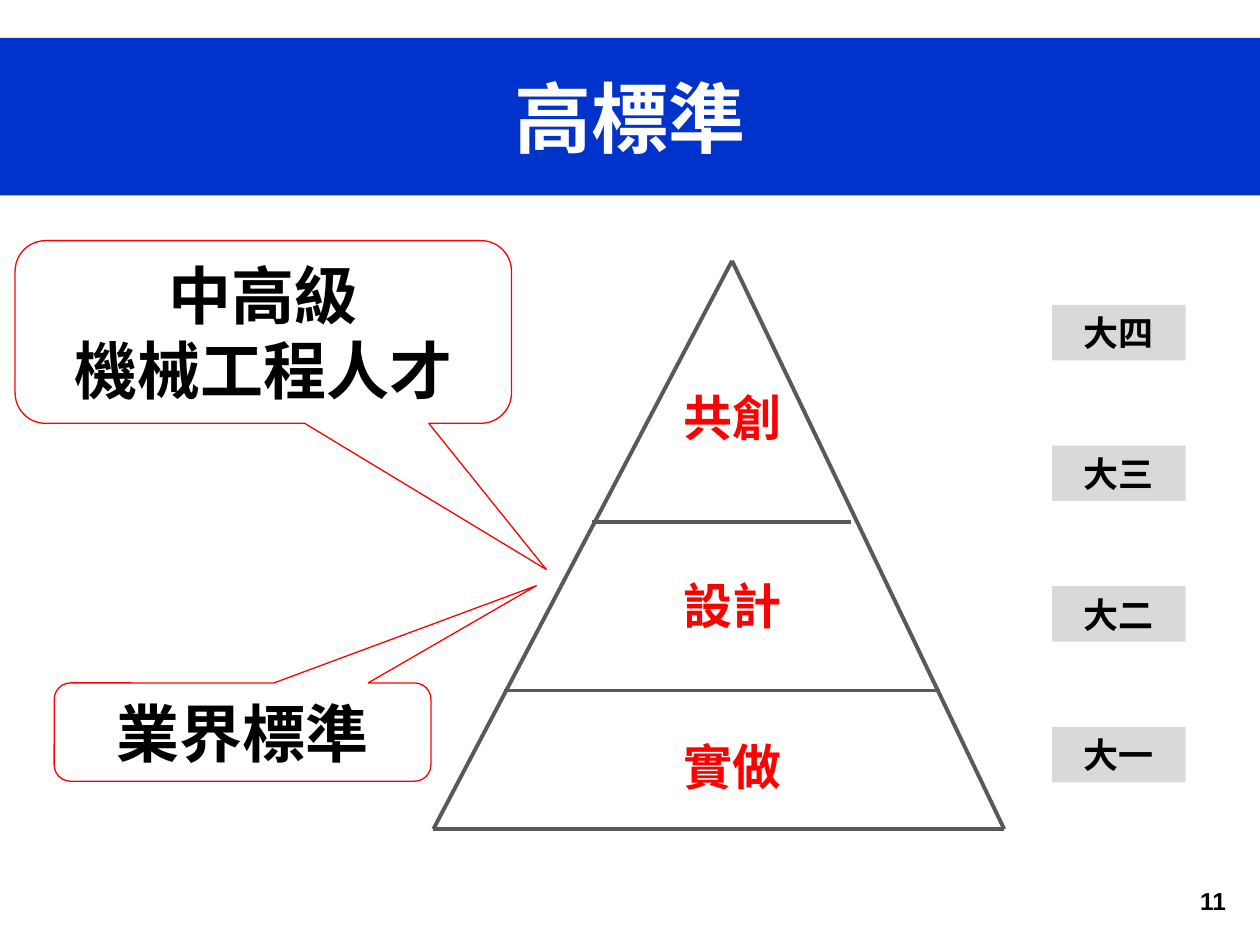
from collections import namedtuple

from lxml import etree
from pptx import Presentation
from pptx import util as u
from pptx.dml import color
from pptx.enum import shapes, text
from pptx.oxml import ns

COLUMNS, ROWS = 100, 75
CELL = u.Inches(0.1)
CJK = "Noto Sans CJK SC"
Box = namedtuple("Box", "left top width height")


def grid(*cells):
    return [round(cell * CELL) for cell in cells]


def rgb(value):
    return color.RGBColor.from_string(value)


def apply(target, values):
    for name, value in values.items():
        setattr(target, name, value)


def write(shape, lines, size, ink, font=CJK, align=text.PP_ALIGN.CENTER,
          anchor=text.MSO_ANCHOR.TOP):
    frame = shape.text_frame
    frame.text = "\n".join(lines)
    apply(frame, {"word_wrap": True, "vertical_anchor": anchor,
                  "auto_size": text.MSO_AUTO_SIZE.NONE})
    for paragraph in frame.paragraphs:
        paragraph.alignment = align
        for run in paragraph.runs:
            apply(run.font, {"name": font, "size": u.Pt(size), "bold": True})
            run.font.color.rgb = rgb(ink)
            east_asian = etree.SubElement(run.font._element, ns.qn("a:ea"))
            east_asian.set("typeface", font)


def add_panel(slide, kind, box, fill, outline=None):
    shape = slide.shapes.add_shape(kind, *grid(*box))
    shape.shadow.inherit = False
    shape.fill.solid()
    shape.fill.fore_color.rgb = rgb(fill)
    if outline:
        shape.line.color.rgb = rgb(outline)
        shape.line.width = u.Pt(0.75)
    else:
        shape.line.fill.background()
    return shape


def add_label(slide, box, label, size, ink, **formats):
    shape = slide.shapes.add_textbox(*grid(*box))
    write(shape, [label], size, ink, **formats)


def add_edge(slide, start, end):
    edge = slide.shapes.add_connector(
        shapes.MSO_CONNECTOR.STRAIGHT, *grid(*start, *end))
    edge.line.color.rgb = rgb("595959")
    edge.line.width = u.Pt(2.25)
    etree.SubElement(edge._element.spPr, ns.qn("a:effectLst"))


def fill_title(slide, box, heading):
    title = slide.shapes.title
    apply(title, dict(zip(Box._fields, grid(*box))))
    title.fill.solid()
    title.fill.fore_color.rgb = rgb("0033CC")
    write(title, [heading], 44, "FFFFFF", anchor=text.MSO_ANCHOR.MIDDLE)


def add_years(slide, box, years):
    height = 4.4
    step = (box.height - height) / (len(years) - 1)
    for index, year in enumerate(years):
        place = Box(box.left, box.top + index * step, box.width, height)
        panel = add_panel(slide, shapes.MSO_SHAPE.RECTANGLE, place, "D9D9D9")
        write(panel, [year], 20, "000000", anchor=text.MSO_ANCHOR.MIDDLE)


def add_pyramid(slide, box, levels):
    right, bottom = box.left + box.width, box.top + box.height
    apex = (box.left + 23.7, box.top)
    add_edge(slide, apex, (box.left, bottom))
    add_edge(slide, apex, (right, bottom))
    add_edge(slide, (box.left, bottom), (right, bottom))
    for drop, start, end in ((20.7, 12.6, 33.1), (34.1, 5.6, 40.2)):
        add_edge(slide, (box.left + start, box.top + drop),
                 (box.left + end, box.top + drop))
    width = 14.2
    for level, drop in levels:
        place = Box(apex[0] - width / 2, box.top + drop, width, 5.7)
        add_label(slide, place, level, 28, "FF0000")


def add_callout(slide, box, lines, pointer):
    callout = add_panel(slide, shapes.MSO_SHAPE.ROUNDED_RECTANGULAR_CALLOUT,
                        box, "FFFFFF", "FF0000")
    for index, value in enumerate((*pointer, 0.167)):
        callout.adjustments[index] = value
    write(callout, lines, 36, "000000", anchor=text.MSO_ANCHOR.MIDDLE)


def build_slide(presentation):
    slide = presentation.slides.add_slide(presentation.slide_layouts[5])
    fill_title(slide, Box(0, 3, COLUMNS, 12.5), "高標準")
    add_years(slide, Box(83.5, 24.2, 10.6, 37.9), ["大四", "大三", "大二", "大一"])
    add_pyramid(slide, Box(34.4, 20.7, 45.3, 45.1),
                [("共創", 9.6), ("設計", 24.5), ("實做", 37.3)])
    add_callout(slide, Box(1.2, 19.1, 39.4, 14.5),
                ["中高級", "機械工程人才"], (0.57, 1.3))
    add_callout(slide, Box(4.3, 54.2, 29.9, 7.8), ["業界標準"], (0.78, -1.49))
    add_label(slide, Box(75, 69.8, 23.3, 5.2), "11", 14, "000000",
              font="Arial", align=text.PP_ALIGN.RIGHT)


def main():
    presentation = Presentation()
    apply(presentation, {"slide_width": COLUMNS * CELL,
                         "slide_height": ROWS * CELL})
    build_slide(presentation)
    presentation.save("out.pptx")


if __name__ == "__main__":
    main()
